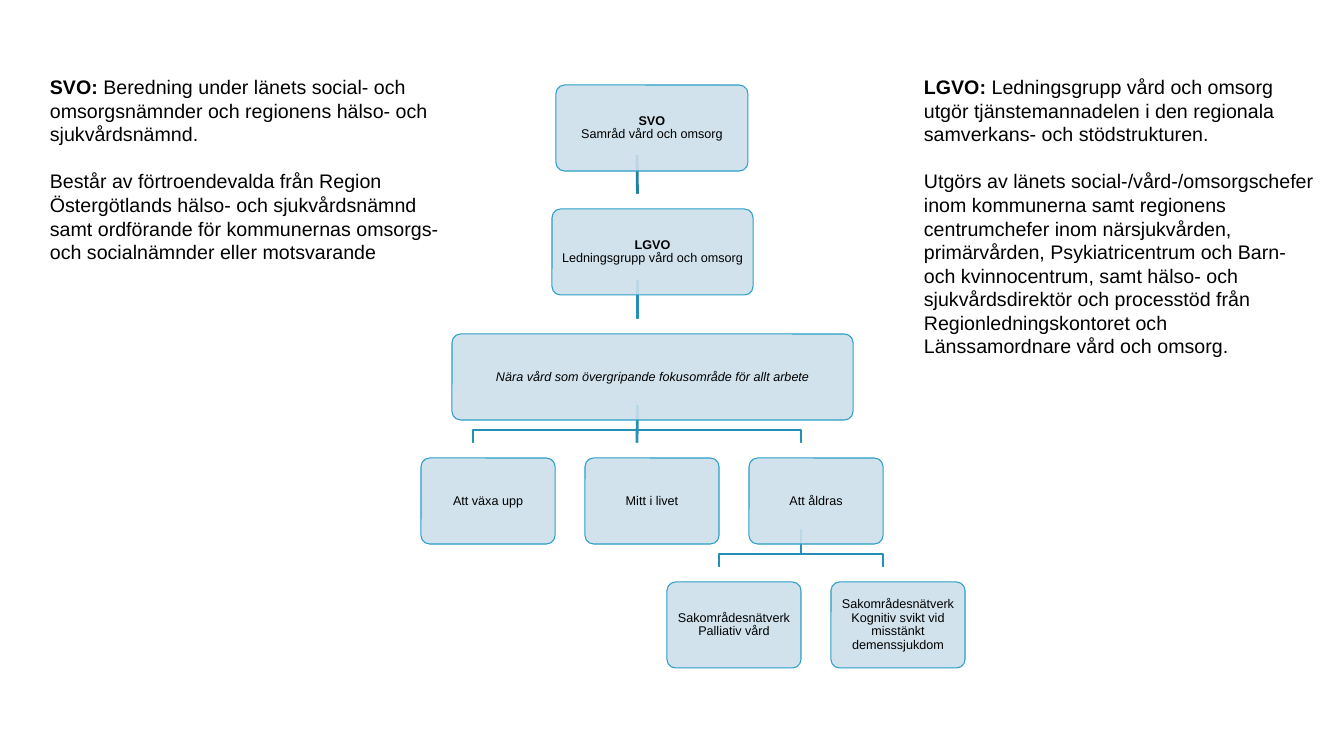
"""Build the slide on the care collaboration structure, SVO to topic networks."""
from lxml import etree
from pptx import Presentation
from pptx.dml.color import RGBColor
from pptx.enum.shapes import MSO_CONNECTOR, MSO_SHAPE
from pptx.enum.text import MSO_ANCHOR, PP_ALIGN
from pptx.oxml.ns import qn
from pptx.util import Pt

ROUNDED = MSO_SHAPE.ROUNDED_RECTANGLE
STRAIGHT = MSO_CONNECTOR.STRAIGHT
CENTER = PP_ALIGN.CENTER
MIDDLE = MSO_ANCHOR.MIDDLE
PX = 914400 / 100.8
ROW_TOPS = [85, 209, 334, 458, 582]
BOX_HEIGHT = 86
BACK_OFFSET = 15
LINK_DROP = 39
BEND_DROP = 26


def px(*lengths):
    return [round(length * PX) for length in lengths]


def paint(color_format, hex_color):
    color_format.rgb = RGBColor.from_string(hex_color)


prs = Presentation()
prs.slide_width, prs.slide_height = px(1344, 756)
slide = prs.slides.add_slide(prs.slide_layouts[6])
shapes = slide.shapes

units = {
    "svo": (None, 652, 0, 192, [("SVO", "b"), ("Samråd vård och omsorg", "")]),
    "lgvo": ("svo", 652, 1, 201, [("LGVO", "b"), ("Ledningsgrupp vård och omsorg", "")]),
    "focus": ("lgvo", 652, 2, 401,
              [("Nära vård som övergripande fokusområde för allt arbete", "i")]),
    "young": ("focus", 488, 3, 134, [("Att växa upp", "")]),
    "midlife": ("focus", 652, 3, 134, [("Mitt i livet", "")]),
    "ageing": ("focus", 816, 3, 134, [("Att åldras", "")]),
    "palliative": ("ageing", 734, 4, 134, [("Sakområdesnätverk Palliativ vård", "")]),
    "cognitive": ("ageing", 898, 4, 134,
                  [("Sakområdesnätverk Kognitiv svikt vid misstänkt demenssjukdom", "")]),
}

straight_links = {}
for unit, (parent, center, row, width, lines) in reversed(units.items()):
    if parent is None:
        continue
    end_x = center - BACK_OFFSET
    start_x = units[parent][1] - BACK_OFFSET
    end_y = ROW_TOPS[row] - BACK_OFFSET
    start_y = end_y - LINK_DROP
    if start_x == end_x:
        link = shapes.add_connector(STRAIGHT, *px(start_x, start_y, end_x, end_y))
        etree.SubElement(link.element.spPr, qn("a:effectLst"))
        straight_links[unit] = link
    else:
        bend_y = start_y + BEND_DROP
        outline = shapes.build_freeform(start_x, start_y, scale=PX)
        outline.add_line_segments(
            [(start_x, bend_y), (end_x, bend_y), (end_x, end_y)], close=False)
        link = outline.convert_to_shape()
        link.shadow.inherit = False
        link.fill.background()
    paint(link.line.color, "227FA0" if parent == "svo" else "268FB6")
    link.line.width = Pt(2)

backs = {}
for unit, (parent, center, row, width, lines) in units.items():
    left, top = center - width // 2, ROW_TOPS[row]
    if parent:
        back = shapes.add_shape(
            ROUNDED, *px(left - BACK_OFFSET, top - BACK_OFFSET, width, BOX_HEIGHT))
        back.adjustments[0] = 0.1
        back.shadow.inherit = False
        back.fill.solid()
        paint(back.fill.fore_color, "FFFFFF")
        back.line.fill.background()
        backs[unit] = back
        if unit in straight_links:
            straight_links[unit].end_connect(back, 0)
            if parent in backs:
                straight_links[unit].begin_connect(backs[parent], 2)

    box = shapes.add_shape(ROUNDED, *px(left, top, width, BOX_HEIGHT))
    box.adjustments[0] = 0.1
    box.shadow.inherit = False
    box.fill.solid()
    paint(box.fill.fore_color, "CDDFEB")
    tint = box.element.spPr.find(qn("a:solidFill"))[0]
    etree.SubElement(tint, qn("a:alpha"), val="90000")
    paint(box.line.color, "2A9EC8")
    box.line.width = Pt(0.75)
    frame = box.text_frame
    frame.word_wrap = True
    frame.vertical_anchor = MIDDLE
    frame.margin_left, frame.margin_top, frame.margin_right, frame.margin_bottom = px(4, 4, 4, 4)
    label = frame.paragraphs[0]
    label.alignment = CENTER
    label.line_spacing = 0.9
    for number, (text, style) in enumerate(lines):
        if number:
            label.add_line_break()
        run = label.add_run()
        run.text = text
        run.font.name = "Arial"
        run.font.size = Pt(9)
        run.font.bold = style == "b"
        run.font.italic = style == "i"
        paint(run.font.color, "000000")

descriptions = [
    (914, 415, 295, [
        [("LGVO: ", True),
         ("Ledningsgrupp vård och omsorg utgör tjänstemannadelen i den regionala "
          "samverkans- och stödstrukturen.", False)],
        [("Utgörs av länets social-/vård-/omsorgschefer inom kommunerna samt regionens "
          "centrumchefer inom närsjukvården, primärvården, Psykiatricentrum och Barn- och "
          "kvinnocentrum, samt hälso- och sjukvårdsdirektör och processtöd från "
          "Regionledningskontoret och Länssamordnare vård och omsorg.", False)]]),
    (40, 429, 201, [
        [("SVO: ", True),
         ("Beredning under länets social- och omsorgsnämnder och regionens hälso- och "
          "sjukvårdsnämnd.", False)],
        [("Består av förtroendevalda från Region Östergötlands hälso- och sjukvårdsnämnd "
          "samt ordförande för kommunernas omsorgs-och socialnämnder eller motsvarande",
          False)]]),
]
for left, width, height, paragraphs in descriptions:
    frame = shapes.add_textbox(*px(left, 70, width, height)).text_frame
    frame.word_wrap = True
    for number, runs in enumerate(paragraphs):
        paragraph = frame.add_paragraph() if number else frame.paragraphs[0]
        if number:
            paragraph.space_before = Pt(17)
        for text, bold in runs:
            run = paragraph.add_run()
            run.text = text
            run.font.name = "Arial"
            run.font.size = Pt(14)
            run.font.bold = bold
            paint(run.font.color, "000000")

prs.save("out.pptx")
